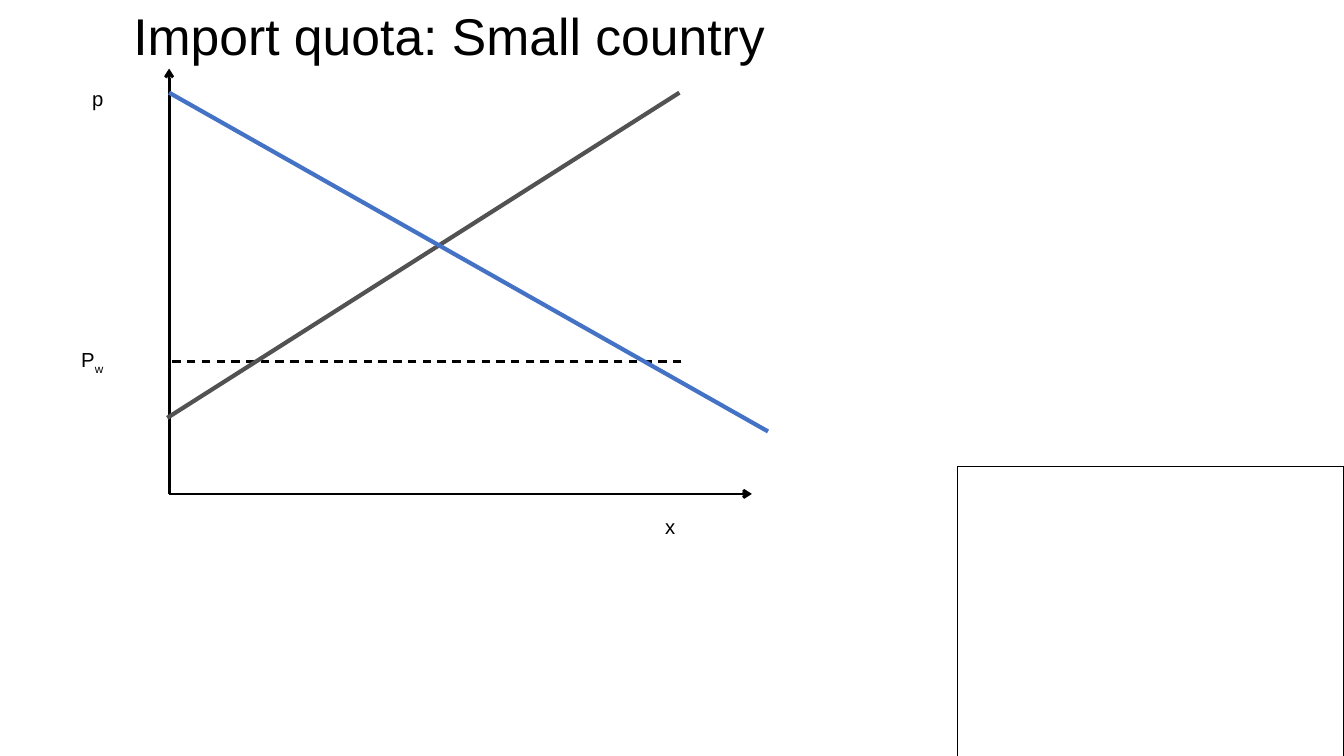
import pptx
import pptx.util
import pptx.dml.color
import pptx.enum.dml
import pptx.enum.shapes
import pptx.enum.text
import pptx.oxml.ns
import lxml.etree

Pt = pptx.util.Pt
Color = pptx.dml.color.RGBColor.from_string
Align = pptx.enum.text.PP_ALIGN
Fit = pptx.enum.text.MSO_AUTO_SIZE
qn = pptx.oxml.ns.qn

theme = {
    "ink": Color("000000"),
    "supply": Color("525252"),
    "demand": Color("4472C4"),
    "font": "Arial",
    "title": Pt(36.9),
    "label": Pt(14.5),
}

deck = pptx.Presentation()
deck.slide_width, deck.slide_height = Pt(960), Pt(540)
slide = deck.slides.add_slide(deck.slide_layouts[5])


def style(font, size):
    looks = {"name": theme["font"], "size": theme[size], "bold": False}
    for key, value in looks.items():
        setattr(font, key, value)
    font.color.rgb = theme["ink"]


left, base, top = 120.8, 352.8, 66.2
lines = [
    ((left, base), (left, 49), "ink", 2, "arrow"),
    ((left, base), (537.1, base), "ink", 2, "arrow"),
    ((486.7, 258.2), (left, 258.2), "ink", 1.5, "dash"),
    ((119.5, 298.5), (485.3, top), "supply", 3, None),
    ((left, top), (548.6, 308.2), "demand", 3, None),
]
for start, end, color, width, kind in lines:
    line = slide.shapes.add_connector(
        pptx.enum.shapes.MSO_CONNECTOR.STRAIGHT, *map(Pt, start + end))
    line.line.color.rgb = theme[color]
    line.line.width = Pt(width)
    if kind == "dash":
        line.line.dash_style = pptx.enum.dml.MSO_LINE.DASH
    if kind == "arrow":
        stroke = line.line._get_or_add_ln()
        lxml.etree.SubElement(stroke, qn("a:tailEnd"), type="arrow")
    lxml.etree.SubElement(line._element.spPr, qn("a:effectLst"))

labels = [
    ("p", "", 34.6, 58.3, 70.6, True),
    ("x", "", 468, 363.6, 21.6, False),
    ("P", "w", 3.6, 244.8, 124.6, True),
]
for text, sub, x, y, width, wrap in labels:
    frame = slide.shapes.add_textbox(Pt(x), Pt(y), Pt(width), Pt(25.2)).text_frame
    frame.word_wrap = wrap
    frame.auto_size = Fit.SHAPE_TO_FIT_TEXT
    para = frame.paragraphs[0]
    para.alignment = Align.CENTER if wrap else Align.LEFT
    run = para.add_run()
    run.text = text
    style(run.font, "label")
    if sub:
        run = para.add_run()
        run.text = sub
        style(run.font, "label")
        run._r.get_or_add_rPr().set("baseline", "-25000")

panel = slide.shapes.add_shape(
    pptx.enum.shapes.MSO_SHAPE.RECTANGLE, Pt(684), Pt(333.4), Pt(276), Pt(207))
panel.shadow.inherit = False
panel.fill.background()
panel.line.color.rgb = theme["ink"]
panel.line.width = Pt(1)

title = slide.shapes.title
place = {"left": 27.4, "top": 0, "width": 587.5, "height": 50.4}
for key, value in place.items():
    setattr(title, key, Pt(value))
frame = title.text_frame
frame.text = "Import quota: Small country"
frame.auto_size = Fit.NONE
frame.word_wrap = True
frame.vertical_anchor = pptx.enum.text.MSO_ANCHOR.MIDDLE
frame.paragraphs[0].alignment = Align.CENTER
style(frame.paragraphs[0].runs[0].font, "title")

deck.save("out.pptx")
